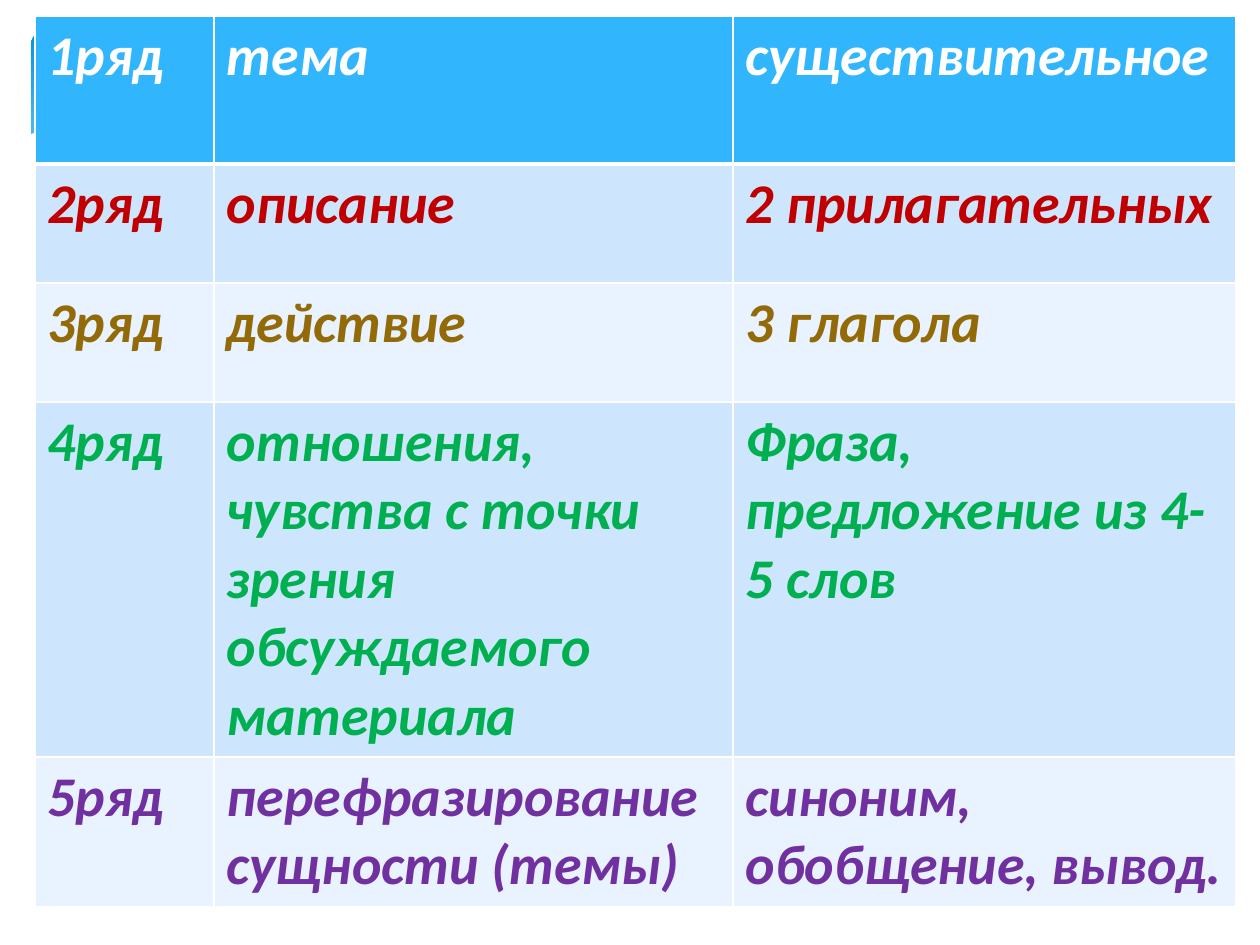
from pptx import Presentation
from pptx.dml.color import RGBColor
from pptx.enum.shapes import MSO_SHAPE
from pptx.oxml.ns import qn
from pptx.util import Pt
from lxml.etree import SubElement

PX = 914400 // 126  # EMU per px

COLUMNS = [179, 519, 503]
# height, fill, text colour, texts
ROWS = [
    (148, "31B6FD", "FFFFFF", ["1ряд", "тема", "существительное"]),
    (119, "CEE5FE", "C00000", ["2ряд", "описание", "2 прилагательных"]),
    (119, "E8F3FF", "936A08", ["3ряд", "действие", "3 глагола"]),
    (355, "CEE5FE", "00B050",
     ["4ряд", "отношения, чувства с точки зрения обсуждаемого материала",
      "Фраза, предложение из 4-5 слов"]),
    (149, "E8F3FF", "7030A0",
     ["5ряд", "перефразирование сущности (темы)", "синоним, обобщение, вывод."]),
]
# Lower edge of the band, relative to its box
WAVE = [(-2, 104), (14, 98), (54, 84), (118, 74), (192, 67), (337, 76),
        (532, 113), (728, 158), (931, 183), (1128, 170), (1200, 147),
        (1200, 251), (-2, 251)]


def px(n):
    return n * PX


def rgb(value):
    return RGBColor.from_string(value)


def add_band(slide, x, y, w, h):
    # Gradient panel
    panel = slide.shapes.add_shape(
        MSO_SHAPE.ROUNDED_RECTANGLE, px(x), px(y), px(w), px(h))
    panel.adjustments[0] = 0.07
    panel.fill.gradient()
    panel.fill.gradient_angle = 270
    stops = panel.fill.gradient_stops
    for stop, color, position in zip(stops, ("0293E0", "83D3FE"), (0, 0.9)):
        stop.color.rgb = rgb(color)
        stop.position = position

    # White wave over its lower part
    points = [(x + dx, y + dy) for dx, dy in WAVE]
    builder = slide.shapes.build_freeform(*points[0], scale=PX)
    builder.add_line_segments(points[1:], close=True)
    wave = builder.convert_to_shape()
    wave.fill.solid()
    wave.fill.fore_color.rgb = rgb("FFFFFF")

    for sp in (panel, wave):
        sp.line.fill.background()
        sp.shadow.inherit = False


def set_borders(cell, color, **widths):
    tcPr = cell._tc.get_or_add_tcPr()
    for side in "LRTB":
        ln = SubElement(tcPr, qn(f"a:ln{side}"), w=str(Pt(widths.get(side, 1))))
        fill = SubElement(ln, qn("a:solidFill"))
        SubElement(fill, qn("a:srgbClr"), val=color)


def fill_cell(cell, text, fill, color):
    cell.fill.solid()
    cell.fill.fore_color.rgb = rgb(fill)
    r = cell.text_frame.paragraphs[0].add_run()
    r.text = text
    r.font.name = "Calibri"
    r.font.size = Pt(32)
    r.font.bold = r.font.italic = True
    r.font.color.rgb = rgb(color)


def add_rows_table(slide, x, y):
    height = sum(row[0] for row in ROWS)
    table = slide.shapes.add_table(
        len(ROWS), len(COLUMNS), px(x), px(y), px(sum(COLUMNS)), px(height)).table
    for column, width in zip(table.columns, COLUMNS):
        column.width = px(width)
    for i, (row_height, fill, color, texts) in enumerate(ROWS):
        table.rows[i].height = px(row_height)
        # Thick rule between the header and the body
        rule = {0: {"B": 3}, 1: {"T": 3}}.get(i, {})
        for j, text in enumerate(texts):
            cell = table.cell(i, j)
            set_borders(cell, "FFFFFF", **rule)
            fill_cell(cell, text, fill, color)


def main():
    prs = Presentation()
    prs.slide_width, prs.slide_height = px(1260), px(945)
    slide = prs.slides.add_slide(prs.slide_layouts[6])
    add_band(slide, 31, 31, 1198, 197)
    add_rows_table(slide, 35, 16)
    prs.save("out.pptx")


if __name__ == "__main__":
    main()
